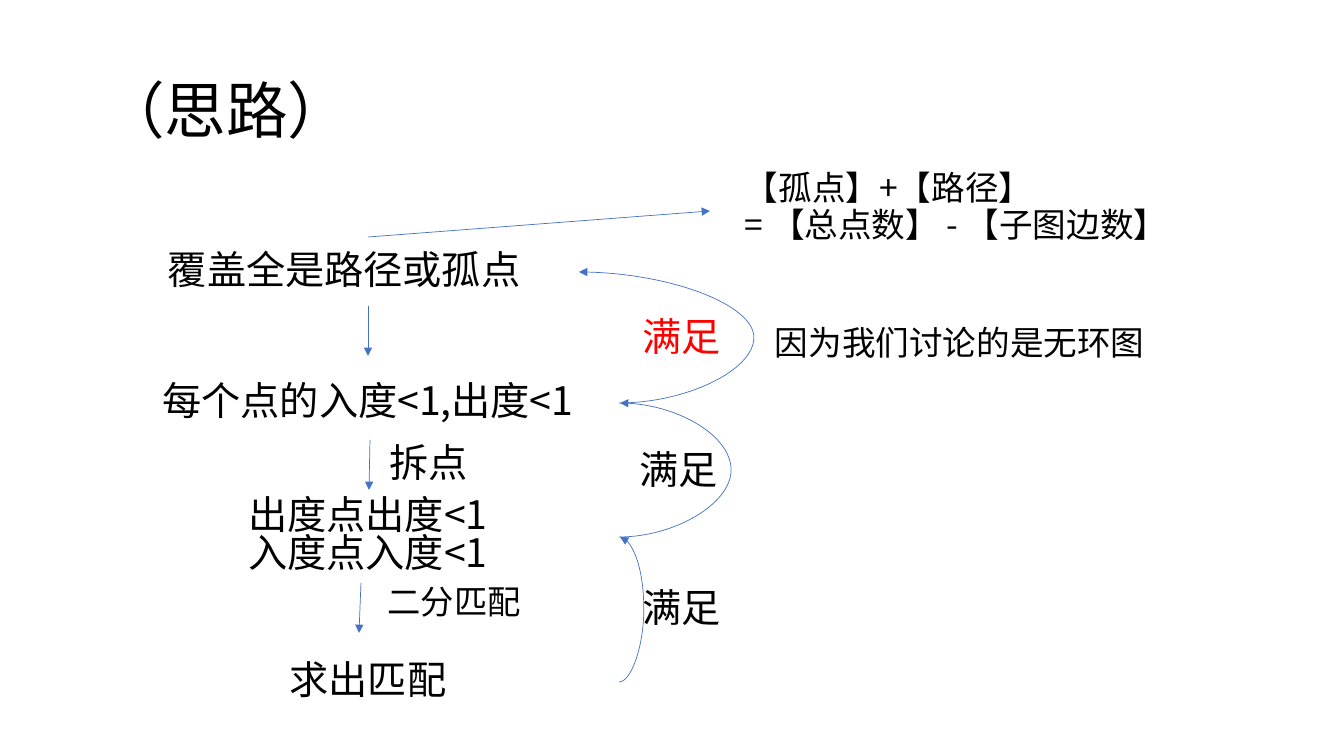
from dataclasses import dataclass
from lxml.etree import SubElement
from pptx import Presentation
from pptx.dml.color import RGBColor as Rgb
from pptx.enum.shapes import MSO_CONNECTOR as Link
from pptx.enum.text import MSO_ANCHOR as Anchor, MSO_AUTO_SIZE as Fit, PP_ALIGN as Align
from pptx.oxml.ns import qn
from pptx.util import Emu, Pt


@dataclass(frozen=True)
class Theme:
    font: str = "Noto Sans CJK SC"
    ink: str = "000000"
    alert: str = "FF0000"
    line: str = "4472C4"
    stroke: float = 0.5
    title: float = 44
    main: float = 28
    note: float = 24
    small: float = 23.8


T = Theme()
L, C = Align.LEFT, Align.CENTER

TITLE = "（思路）", (93, 41, 1159, 146)

# lines, (left, top, width, height) in px, size, align, line spacing, colour
STEPS = [
    (["覆盖全是路径或孤点"], (158, 237, 420, 69), T.main, L, 0.9, T.ink),
    (["每个点的入度<1,出度<1"], (117, 356, 502, 94), T.main, C, 0.9, T.ink),
    (["出度点出度<1", "入度点入度<1"], (117, 490, 502, 94), T.main, C, 0.8, T.ink),
    (["求出匹配"], (117, 635, 502, 94), T.main, C, 0.9, T.ink),
]
LABELS = [
    (["拆点"], (379, 433, 99, 64), T.main, C, 0.9, T.ink),
    (["二分匹配"], (376, 573, 156, 64), T.small, C, 0.8, T.ink),
    (["满足"], (604, 307, 156, 64), T.main, C, 0.9, T.alert),
    (["满足"], (601, 440, 156, 64), T.main, C, 0.9, T.ink),
    (["满足"], (604, 578, 156, 64), T.main, C, 0.9, T.ink),
]
NOTES = [
    (["因为我们讨论的是无环图"], (765, 272, 579, 146), T.note, L, 0.9, T.ink),
    (["【孤点】+【路径】", "= 【总点数】 - 【子图边数】"],
     (735, 135, 609, 146), T.note, L, 0.9, T.ink),
]

# start x, start y, end x, end y in px
ARROWS = [
    (368, 306, 368, 356),
    (370, 440, 369, 490),
    (361, 583, 359, 633),
    (368, 237, 710, 211),
]
# the same, then the x of the outermost point
CURVES = [
    (619, 682, 620, 537, 644),
    (619, 537, 620, 403, 732),
    (619, 403, 579, 272, 754),
]


def px(n):
    return Emu(round(n * 914400 / 100.8))


def write(frame, lines, size, align, space, ink):
    frame.text = "\n".join(lines)
    frame.word_wrap = True
    frame.auto_size = Fit.NONE
    frame.vertical_anchor = Anchor.MIDDLE
    for para in frame.paragraphs:
        para.alignment = align
        para.line_spacing = space
        for run in para.runs:
            font = run.font
            font.name = T.font
            font.size = Pt(size)
            font.color.rgb = Rgb.from_string(ink)
            east = SubElement(font._element, qn("a:ea"))
            east.set("typeface", T.font)


def draw(slide, kind, ends):
    link = slide.shapes.add_connector(kind, *map(px, ends))
    link.line.color.rgb = Rgb.from_string(T.line)
    link.line.width = Pt(T.stroke)
    tail = SubElement(link.line._get_or_add_ln(), qn("a:tailEnd"))
    tail.set("type", "triangle")
    SubElement(link._element.spPr, qn("a:effectLst"))
    return link


def bend(link, x0, x1, peak):
    """Move the middle of a curved connector out to peak."""
    guides = link._element.spPr.find(qn("a:prstGeom")).find(qn("a:avLst"))
    guide = SubElement(guides, qn("a:gd"))
    guide.set("name", "adj1")
    guide.set("fmla", f"val {round((peak - x0) / (x1 - x0) * 100000)}")


def main():
    deck = Presentation()
    deck.slide_width, deck.slide_height = px(1344), px(756)
    slide = deck.slides.add_slide(deck.slide_layouts[5])

    words, box = TITLE
    head = slide.shapes.title
    head.left, head.top, head.width, head.height = map(px, box)
    write(head.text_frame, [words], T.title, L, 0.9, T.ink)

    for lines, box, *style in STEPS + LABELS + NOTES:
        text = slide.shapes.add_textbox(*map(px, box))
        write(text.text_frame, lines, *style)

    for ends in ARROWS:
        draw(slide, Link.STRAIGHT, ends)
    for *ends, peak in CURVES:
        bend(draw(slide, Link.CURVE, ends), ends[0], ends[2], peak)

    deck.save("out.pptx")


if __name__ == "__main__":
    main()
